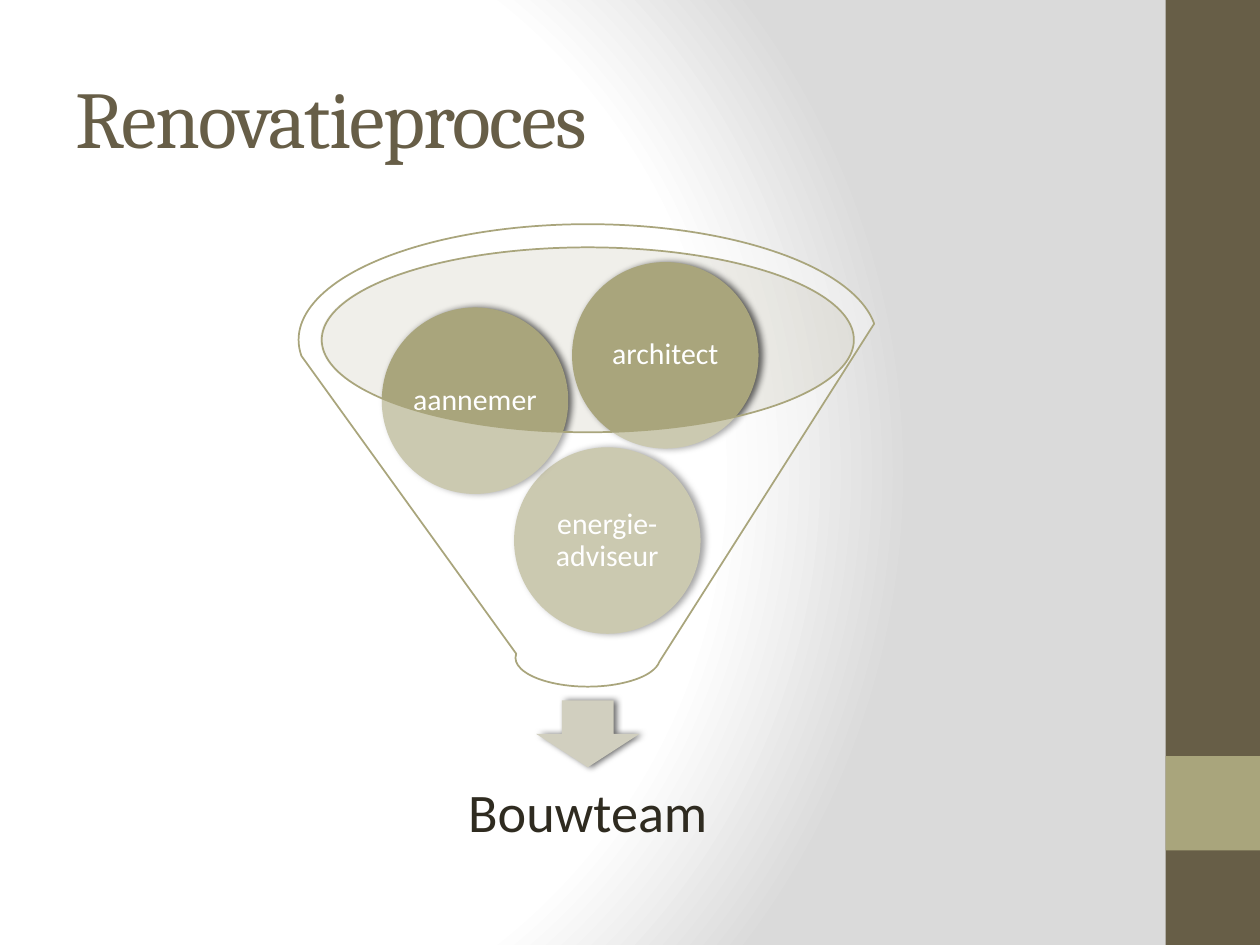
from lxml import etree
from pptx import Presentation
from pptx.dml.color import RGBColor
from pptx.enum.shapes import MSO_SHAPE as Shape
from pptx.enum.text import MSO_ANCHOR as Anchor, PP_ALIGN as Align
from pptx.oxml import parse_xml
from pptx.oxml.ns import nsdecls, qn
from pptx.util import Inches, Pt

BROWN = RGBColor(0x67, 0x5E, 0x47)
OLIVE = RGBColor(0xA9, 0xA5, 0x7C)
PALE_OLIVE = RGBColor(0xDA, 0xD8, 0xCC)
ARROW_GREY = RGBColor(0xD1, 0xCF, 0xBF)
DARK = RGBColor(0x2F, 0x2B, 0x20)
WHITE = RGBColor(0xFF, 0xFF, 0xFF)
SILVER = RGBColor(0xDA, 0xDA, 0xDA)

BALL_SIZE = 1.48
# Offsets of the balls from the top left of the funnel
BALLS = [("energie-adviseur", 1.71, 1.77), ("aannemer", 0.66, 0.66), ("architect", 2.17, 0.3)]


def set_background(slide):
    stops = "".join(
        f'<a:gs pos="{position * 1000}"><a:srgbClr val="{color}"/></a:gs>'
        for position, color in [(0, WHITE), (75, WHITE), (100, SILVER)])
    background = parse_xml(
        f'<p:bg {nsdecls("p", "a")}><p:bgPr><a:gradFill rotWithShape="1">'
        f'<a:gsLst>{stops}</a:gsLst><a:path path="circle">'
        '<a:fillToRect l="20000" t="50000" r="100000" b="50000"/></a:path>'
        '</a:gradFill><a:effectLst/></p:bgPr></p:bg>')
    slide.element.find(qn("p:cSld")).insert(0, background)


def add_soft_shadow(shape):
    effects = shape._element.spPr.find(qn("a:effectLst"))
    shadow = etree.SubElement(effects, qn("a:outerShdw"), blurRad=str(Pt(4)),
                              dist=str(Pt(2)), dir="0", rotWithShape="0")
    color = etree.SubElement(shadow, qn("a:srgbClr"), val="000000")
    etree.SubElement(color, qn("a:alpha"), val="60000")


def add_filled_shape(slide, kind, box, color, opacity=100, line=None, shadow=False):
    shape = slide.shapes.add_shape(kind, *map(Inches, box))
    shape.shadow.inherit = False
    shape.fill.solid()
    shape.fill.fore_color.rgb = color
    if opacity < 100:
        color_element = shape._element.spPr.find(qn("a:solidFill"))[0]
        etree.SubElement(color_element, qn("a:alpha"), val=str(opacity * 1000))
    if line is None:
        shape.line.fill.background()
    else:
        shape.line.color.rgb = line
        shape.line.width = Pt(1)
    if shadow:
        add_soft_shadow(shape)
    return shape


def write_text(shape, text, font, color, inset, align=Align.CENTER, line_spacing=0.9):
    frame = shape.text_frame
    margins = {f"margin_{side}": Inches(inset) for side in ("left", "top", "right", "bottom")}
    for name, value in {"word_wrap": True, "vertical_anchor": Anchor.MIDDLE, **margins}.items():
        setattr(frame, name, value)
    paragraph = frame.paragraphs[0]
    paragraph.alignment = align
    paragraph.line_spacing = line_spacing
    run = paragraph.add_run()
    run.text = text
    for name, value in font.items():
        setattr(run.font, name, value)
    run.font.color.rgb = color
    return run


def add_side_band(slide, left, top, width, height):
    add_filled_shape(slide, Shape.RECTANGLE, (left, top, width, height), BROWN)
    add_filled_shape(slide, Shape.RECTANGLE, (left, top + 0.8 * height, width, width), OLIVE)


def add_title(slide, left, top, width, height):
    title = slide.shapes.title
    box = {"left": left, "top": top, "width": width, "height": height}
    for name, value in box.items():
        setattr(title, name, Inches(value))
    run = write_text(title, "Renovatieproces", {"name": "Cambria", "size": Pt(46)},
                     BROWN, 0.1, Align.LEFT, 1.0)
    run.font._element.set("spc", "-100")


def add_funnel(slide, left, top, width, height):
    center = left + width / 2
    # Funnel mouth, arrow and result
    add_filled_shape(slide, Shape.OVAL, (left + 0.17, top + 0.18, 4.23, 1.47), PALE_OLIVE, 40)
    add_filled_shape(slide, Shape.DOWN_ARROW, (center - 0.41, top + height + 0.11, 0.82, 0.53),
                     ARROW_GREY, shadow=True)
    result = slide.shapes.add_textbox(
        *map(Inches, (center - 1.97, top + height + 0.53, 3.94, 0.98)))
    write_text(result, "Bouwteam", {"name": "Calibri", "size": Pt(31)}, DARK, 0.24)

    # Team members falling into the funnel
    for label, x, y in BALLS:
        ball = add_filled_shape(slide, Shape.OVAL, (left + x, top + y, BALL_SIZE, BALL_SIZE),
                                OLIVE, shadow=True)
        write_text(ball, label, {"name": "Calibri", "size": Pt(17)}, WHITE, 0.02)

    # Translucent funnel in front
    add_filled_shape(slide, Shape.FUNNEL, (left, top, width, height), WHITE, 40, OLIVE)


def main():
    presentation = Presentation()
    presentation.slide_width, presentation.slide_height = Inches(10), Inches(7.5)
    slide = presentation.slides.add_slide(presentation.slide_layouts[5])
    set_background(slide)
    add_side_band(slide, 9.25, 0, 0.75, 7.5)
    add_title(slide, 0.5, 0.3, 8.33, 1.25)
    add_funnel(slide, 2.37, 1.78, 4.59, 3.67)
    presentation.save("out.pptx")


if __name__ == "__main__":
    main()
